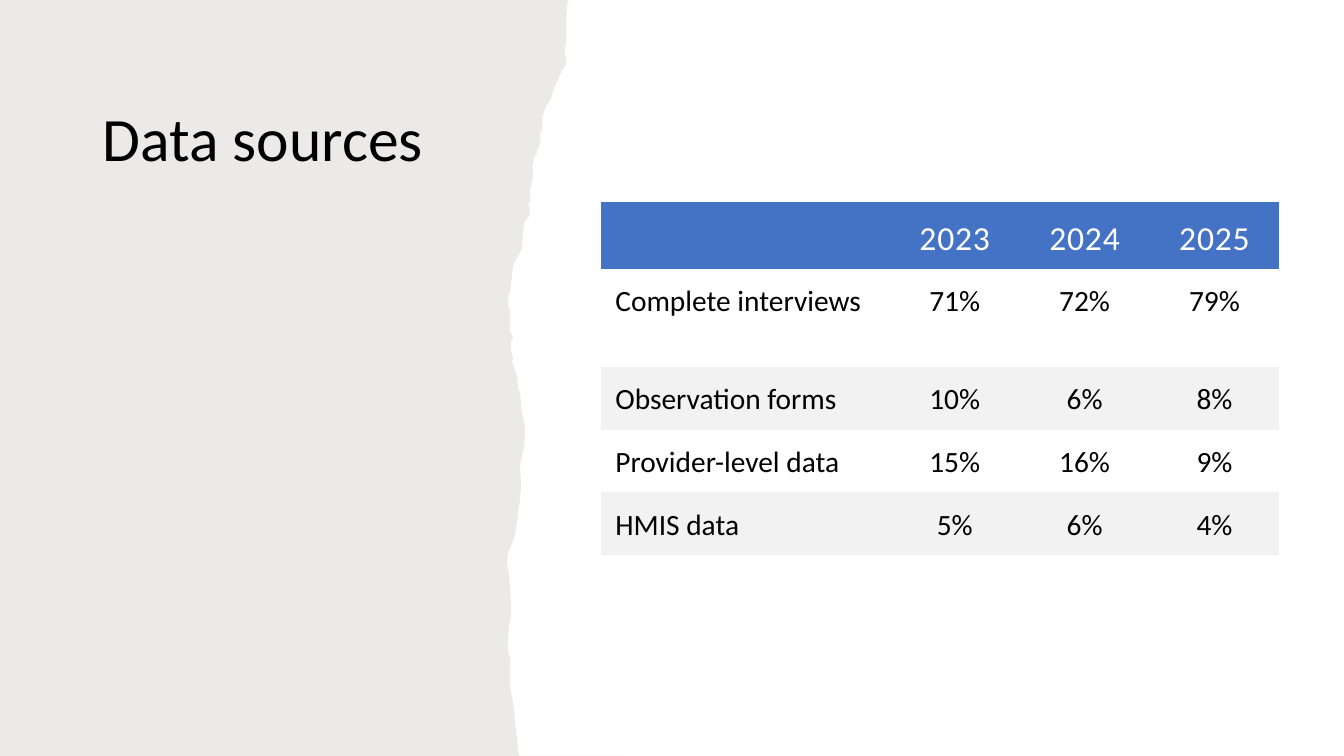
import dataclasses

import lxml.etree
import pptx
import pptx.dml.color
import pptx.enum.text
import pptx.oxml.ns
import pptx.util

Pt = pptx.util.Pt
RGB = pptx.dml.color.RGBColor.from_string
ALIGN = pptx.enum.text.PP_ALIGN
ANCHOR = pptx.enum.text.MSO_ANCHOR
qn = pptx.oxml.ns.qn


@dataclasses.dataclass(frozen=True)
class Theme:
    font: str = "Calibri"
    text: str = "000000"
    paper: str = "82766A"
    header_fill: str = "4472C4"
    header_text: str = "FFFFFF"
    band: str = "F2F2F2"
    title_size: int = 44
    header_size: int = 24
    body_size: int = 21


theme = Theme()

WIDTH, HEIGHT = 960, 540
UNITS = 10  # freeform units per point
PAPER_OPACITY = "15000"
NO_GRID_STYLE = "{2D5ABB26-0587-4C30-8999-92F81FD0307C}"

# Torn right edge of the paper, top to bottom, in points
TORN_EDGE = [
    (406.8, 0), (405.4, 1.4), (404.6, 10.1), (404.6, 28.1), (403.2, 37.4),
    (404.6, 41.8), (404.6, 45.4), (403.2, 47.5), (399.6, 54), (398.9, 56.9),
    (397.4, 59), (395.3, 64.1), (393.8, 69.8), (389.5, 77), (387.4, 83.5),
    (387.4, 91.4), (385.9, 95), (385.9, 102.2), (383.8, 107.3), (383, 110.9),
    (381.6, 112.3), (380.2, 119.5), (380.9, 124.6), (380.2, 129.6),
    (378.7, 135.4), (378.7, 144), (377.3, 146.9), (378.7, 149.8),
    (378, 154.1), (374.4, 159.1), (373.7, 166.3), (373, 172.8), (373, 177.8),
    (369.4, 183.6), (366.5, 189.4), (365.8, 196.6), (365, 204.5),
    (362.9, 213.8), (362.9, 217.4), (364.3, 222.5), (364.3, 234.7),
    (363.6, 235.4), (366.5, 241.2), (365, 244.1), (365, 250.6),
    (366.5, 256.3), (365.8, 258.5), (369.4, 268.6), (370.1, 277.9),
    (371.5, 280.1), (372.2, 291.6), (375.1, 305.3), (374.4, 319),
    (371.5, 331.9), (372.2, 347), (371.5, 357.1), (370.1, 364.3),
    (369.4, 373), (367.9, 381.6), (365.8, 388.1), (362.9, 394.6),
    (362.2, 402.5), (363.6, 410.4), (365, 430.6), (365, 440.6),
    (363.6, 446.4), (362.9, 454.3), (362.9, 465.1), (364.3, 470.2),
    (364.3, 490.3), (366.5, 501.8), (367.9, 514.8), (368.6, 522.7),
    (369.4, 527.8), (370.1, 537.1), (371.5, 540), (445, 540),
]

COLUMN_WIDTHS = [206.6, 92.8, 92.8, 92.8]
ROW_HEIGHTS = [48.2, 69.9, 44.8, 44.8, 44.8]
ROWS = [
    ["", "2023", "2024", "2025"],
    ["Complete interviews", "71%", "72%", "79%"],
    ["Observation forms", "10%", "6%", "8%"],
    ["Provider-level data", "15%", "16%", "9%"],
    ["HMIS data", "5%", "6%", "4%"],
]
CELL_FORMAT = {
    "margin_left": Pt(10.6),
    "margin_right": Pt(10.6),
    "margin_top": Pt(10.6),
    "margin_bottom": Pt(5),
}


def write(p, text, size, color):
    """Add one run to a paragraph and return it."""
    r = p.add_run()
    r.text = text
    font_format = {"name": theme.font, "size": Pt(size), "bold": False}
    for name, value in font_format.items():
        setattr(r.font, name, value)
    r.font.color.rgb = RGB(color)
    return r


prs = pptx.Presentation()
prs.slide_width, prs.slide_height = Pt(WIDTH), Pt(HEIGHT)
s = prs.slides.add_slide(prs.slide_layouts.get_by_name("Title Only"))

# Torn paper behind the title
builder = s.shapes.build_freeform(0, 0, scale=Pt(1) / UNITS)
outline = TORN_EDGE + [(0, HEIGHT)]
builder.add_line_segments([(x * UNITS, y * UNITS) for x, y in outline])
paper = builder.convert_to_shape()
paper.shadow.inherit = False
paper.fill.solid()
paper.fill.fore_color.rgb = RGB(theme.paper)
paper.line.fill.background()
color = paper.fill._xPr.find(qn("a:solidFill"))[0]
lxml.etree.SubElement(color, qn("a:alpha"), val=PAPER_OPACITY)
s.shapes.title.element.addprevious(paper.element)

# Title
title = s.shapes.title
title_box = {"left": 66.2, "top": 48.2, "width": 294.5, "height": 105.1}
for name, value in title_box.items():
    setattr(title, name, Pt(value))
tf = title.text_frame
frame_format = {
    "word_wrap": True,
    "auto_size": pptx.enum.text.MSO_AUTO_SIZE.NONE,
    "vertical_anchor": ANCHOR.MIDDLE,
}
for name, value in frame_format.items():
    setattr(tf, name, value)
p = tf.paragraphs[0]
p.alignment = ALIGN.LEFT
p.line_spacing = 0.9
write(p, "Data sources", theme.title_size, theme.text)

# Table of source shares by year
table = s.shapes.add_table(
    len(ROWS), len(COLUMN_WIDTHS), Pt(429), Pt(144),
    Pt(sum(COLUMN_WIDTHS)), Pt(sum(ROW_HEIGHTS)),
).table
table.first_row = table.horz_banding = False
table._tbl.tblPr.find(qn("a:tableStyleId")).text = NO_GRID_STYLE
for column, width in zip(table.columns, COLUMN_WIDTHS):
    column.width = Pt(width)
for row, height in zip(table.rows, ROW_HEIGHTS):
    row.height = Pt(height)

for i, texts in enumerate(ROWS):
    header = i == 0
    banded = i > 0 and i % 2 == 0
    for j, text in enumerate(texts):
        cell = table.cell(i, j)
        for name, value in CELL_FORMAT.items():
            setattr(cell, name, value)
        cell.vertical_anchor = ANCHOR.MIDDLE if header else ANCHOR.TOP
        if header or banded:
            cell.fill.solid()
            cell.fill.fore_color.rgb = RGB(theme.header_fill if header else theme.band)
        else:
            cell.fill.background()
        if not text:
            continue
        p = cell.text_frame.paragraphs[0]
        p.alignment = ALIGN.CENTER if j else ALIGN.LEFT
        if header:
            r = write(p, text, theme.header_size, theme.header_text)
            r.font._element.set("spc", "60")
        else:
            write(p, text, theme.body_size, theme.text)

prs.save("out.pptx")
